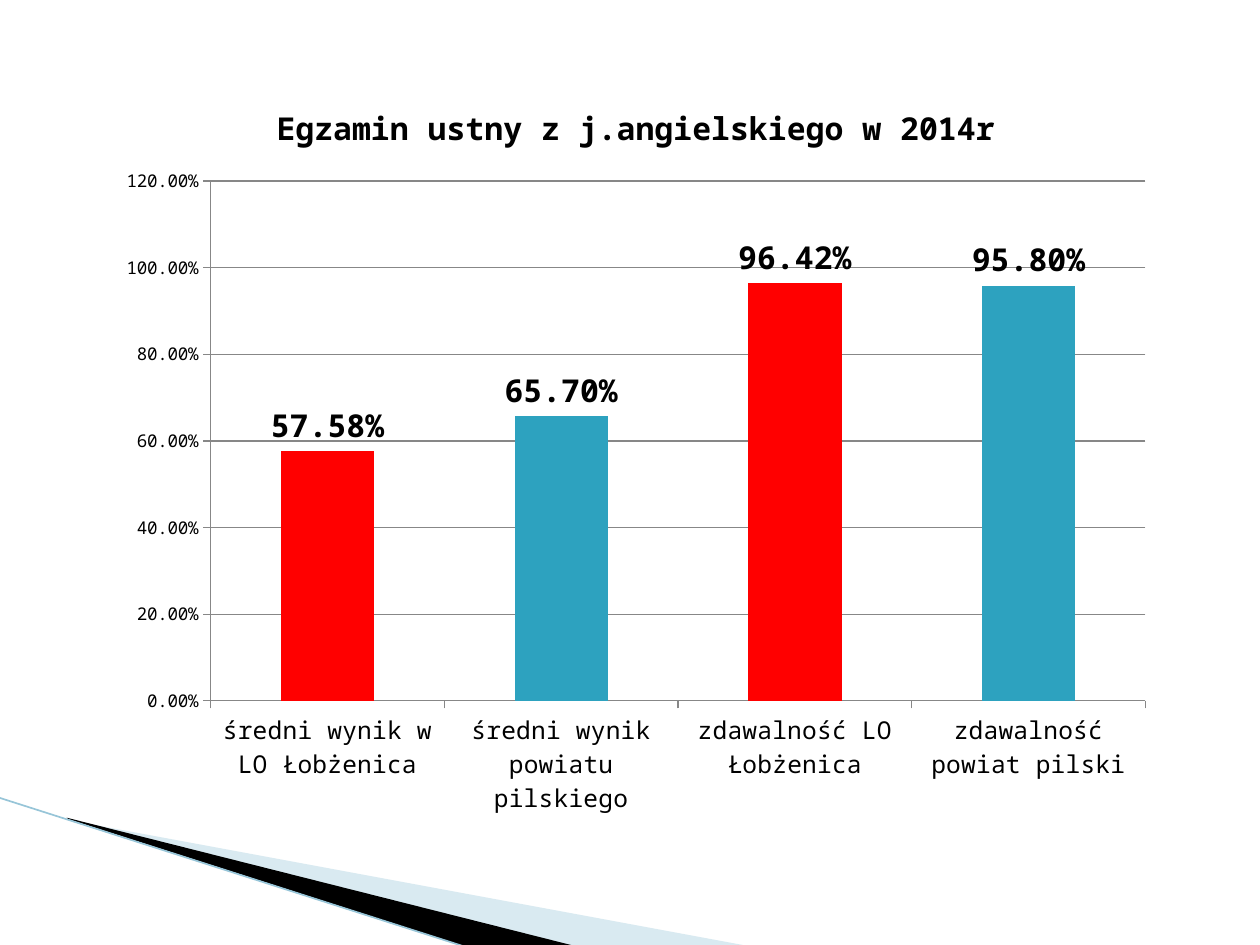
from lxml import etree
from pptx import Presentation
from pptx import util as u
from pptx.chart.data import CategoryChartData
from pptx.dml.color import RGBColor
from pptx.enum import chart as ch, shapes
from pptx.oxml import parse_xml
from pptx.oxml.ns import qn, nsdecls

FONT = "Noto Sans Mono"
BLACK, RED, TEAL, GRAY = "000000", "FF0000", "2DA2BF", "878787"
PERCENT = "0.00%"
RESULTS = {
    "średni wynik w LO Łobżenica": 0.5758,
    "średni wynik powiatu pilskiego": 0.657,
    "zdawalność LO Łobżenica": 0.9642,
    "zdawalność powiat pilski": 0.958,
}


def rgb(value):
    return RGBColor.from_string(value)


def paint(fill, color):
    fill.solid()
    fill.fore_color.rgb = rgb(color)


def style_font(font, size, bold=False):
    for name, value in {"name": FONT, "size": u.Pt(size), "bold": bold}.items():
        setattr(font, name, value)
    font.color.rgb = rgb(BLACK)


def style_line(line, color, width):
    line.color.rgb = rgb(color)
    line.width = u.Pt(width)


def add_wedge(slide, points, color, opacity=100):
    start, *rest = [(u.Inches(x), u.Inches(y)) for x, y in points]
    builder = slide.shapes.build_freeform(*start)
    builder.add_line_segments(rest, close=True)
    wedge = builder.convert_to_shape()
    wedge.shadow.inherit = False
    wedge.line.fill.background()
    paint(wedge.fill, color)
    if opacity < 100:
        tint = wedge.fill._xPr.find(".//" + qn("a:srgbClr"))
        etree.SubElement(tint, qn("a:alpha"), val=str(opacity * 1000))


def add_edge(slide, start, end, color, width):
    edge = slide.shapes.add_connector(
        shapes.MSO_CONNECTOR.STRAIGHT, *map(u.Inches, start + end))
    style_line(edge.line, color, width)
    etree.SubElement(edge._element.spPr, qn("a:effectLst"))


def place_plot(chart, x, y, w, h):
    """Fix the inner plot area, in fractions of the chart."""
    plot_area = chart._chartSpace.chart.plotArea
    for old in plot_area.findall(qn("c:layout")):
        plot_area.remove(old)
    sizes = "".join(f'<c:{tag} val="{value}"/>'
                    for tag, value in {"x": x, "y": y, "w": w, "h": h}.items())
    plot_area.insert(0, parse_xml(
        f'<c:layout {nsdecls("c")}><c:manualLayout>'
        '<c:layoutTarget val="inner"/><c:xMode val="edge"/><c:yMode val="edge"/>'
        f'{sizes}</c:manualLayout></c:layout>'))


def style_axes(chart):
    for axis, size in ((chart.category_axis, 14), (chart.value_axis, 10)):
        axis.major_tick_mark = ch.XL_TICK_MARK.OUTSIDE
        style_font(axis.tick_labels.font, size)
        style_line(axis.format.line, GRAY, 0.75)
    scale = chart.value_axis
    for name, value in {"minimum_scale": 0, "maximum_scale": 1.2,
                        "major_unit": 0.2, "has_major_gridlines": True}.items():
        setattr(scale, name, value)
    style_line(scale.major_gridlines.format.line, GRAY, 0.75)
    scale.tick_labels.number_format = PERCENT
    scale.tick_labels.number_format_is_linked = False


def style_bars(plot):
    plot.gap_width = 150
    plot.vary_by_categories = False
    bars = plot.series[0]
    bars.invert_if_negative = False
    paint(bars.format.fill, TEAL)
    for school in (0, 2):
        paint(bars.points[school].format.fill, RED)
    labels = bars.data_labels
    for name, value in {"show_value": True, "number_format": PERCENT,
                        "number_format_is_linked": False,
                        "position": ch.XL_LABEL_POSITION.OUTSIDE_END}.items():
        setattr(labels, name, value)
    style_font(labels.font, 18, True)


def add_results_chart(slide):
    data = CategoryChartData(number_format=PERCENT)
    data.categories = list(RESULTS)
    data.add_series("Series 1", list(RESULTS.values()))
    chart = slide.shapes.add_chart(
        ch.XL_CHART_TYPE.COLUMN_CLUSTERED, u.Inches(0.83), u.Inches(0.6),
        u.Inches(8.43), u.Inches(5.98), data).chart
    style_font(chart.font, 10)
    chart.has_legend = False
    heading = chart.chart_title.text_frame
    heading.text = "Egzamin ustny z j.angielskiego w 2014r"
    style_font(heading.paragraphs[0].runs[0].font, 18, True)
    chart.chart_title.include_in_layout = False
    place_plot(chart, 0.1, 0.14, 0.88, 0.69)
    style_axes(chart)
    style_bars(chart.plots[0])


def main():
    deck = Presentation()
    deck.slide_width, deck.slide_height = u.Inches(10), u.Inches(7.5)
    slide = deck.slides.add_slide(deck.slide_layouts[6])
    # Corner decoration
    add_wedge(slide, [(0.55, 6.51), (5.95, 7.51), (4.56, 7.51), (0.55, 6.5)],
              "A0CBDC", 40)
    add_wedge(slide, [(0.53, 6.49), (4.57, 7.51), (3.72, 7.52), (0.54, 6.5)],
              BLACK)
    add_edge(slide, (-0.01, 6.33), (3.71, 7.52), "97C5D8", 0.95)
    # Exam results
    add_results_chart(slide)
    deck.save("out.pptx")


if __name__ == "__main__":
    main()
